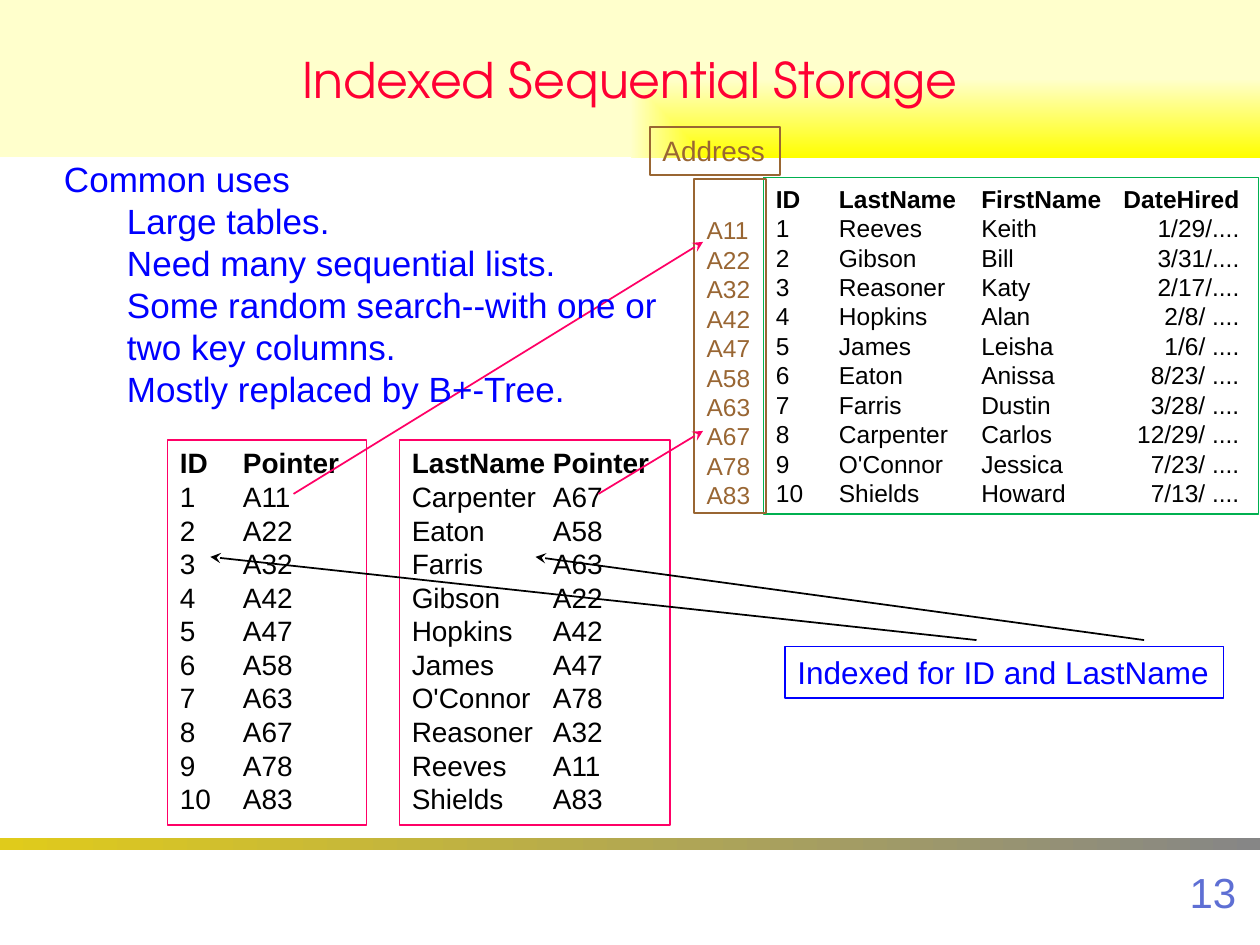
from dataclasses import dataclass

from lxml.etree import SubElement
from pptx import Presentation
from pptx.dml.color import RGBColor as RGB
from pptx.enum.shapes import MSO_CONNECTOR as CONN, MSO_SHAPE as SHAPE
from pptx.enum.text import MSO_ANCHOR as ANCHOR, MSO_AUTO_SIZE as AUTO, PP_ALIGN as ALIGN
from pptx.oxml.ns import qn
from pptx.util import Inches, Pt


@dataclass(frozen=True)
class Theme:
    font: str = "Arial"
    title_font: str = "TeX Gyre Adventor"
    title: str = "FF0033"
    blue: str = "0000FF"
    black: str = "000000"
    pink: str = "FF0066"
    brown: str = "996633"
    green: str = "00B050"
    number: str = "5E6FD4"
    yellow: str = "FFFF00"
    cream: str = "FFFFCC"
    gold: str = "E0CB1B"
    gray: str = "868686"
    title_pt: int = 28
    number_pt: int = 24
    body_pt: int = 20
    label_pt: int = 18
    index_pt: int = 16
    data_pt: int = 14


@dataclass(frozen=True)
class Box:
    at: tuple[float, float, float, float]
    lines: list[str]
    size: int
    color: str
    border: str
    tabs: tuple[tuple[float, str], ...] = ()
    header: bool = False
    wrap: bool = True
    top: float = 0.05


@dataclass(frozen=True)
class Arrow:
    start: tuple[float, float]
    end: tuple[float, float]
    color: str


T = Theme()

HEADER = ("ID", "LastName", "FirstName", "DateHired")
EMPLOYEES = [
    ("A11", "1", "Reeves", "Keith", "1/29/...."),
    ("A22", "2", "Gibson", "Bill", "3/31/...."),
    ("A32", "3", "Reasoner", "Katy", "2/17/...."),
    ("A42", "4", "Hopkins", "Alan", "2/8/ ...."),
    ("A47", "5", "James", "Leisha", "1/6/ ...."),
    ("A58", "6", "Eaton", "Anissa", "8/23/ ...."),
    ("A63", "7", "Farris", "Dustin", "3/28/ ...."),
    ("A67", "8", "Carpenter", "Carlos", "12/29/ ...."),
    ("A78", "9", "O'Connor", "Jessica", "7/23/ ...."),
    ("A83", "10", "Shields", "Howard", "7/13/ ...."),
]
USES = [
    "Large tables.",
    "Need many sequential lists.",
    "Some random search--with one or two key columns.",
    "Mostly replaced by B+-Tree.",
]

addresses = [e[0] for e in EMPLOYEES]
data_rows = ["\t".join(r) for r in [HEADER, *(e[1:] for e in EMPLOYEES)]]
id_index = ["ID\tPointer"] + [f"{e[1]}\t{e[0]}" for e in EMPLOYEES]
name_index = ["LastName\tPointer"] + sorted(f"{e[2]}\t{e[0]}" for e in EMPLOYEES)

BOXES = [
    Box((6.06, 1.41, 3.93, 2.67), data_rows, T.data_pt, T.black, T.green,
        ((0.5, "l"), (1.63, "l"), (3.68, "r")), header=True),
    Box((1.33, 3.49, 1.58, 3.06), id_index, T.index_pt, T.black, T.pink,
        ((0.5, "l"),), header=True),
    Box((5.51, 1.42, 0.57, 2.65), addresses, T.data_pt, T.brown, T.brown,
        wrap=False, top=0.29),
    Box((5.16, 1.01, 1.03, 0.38), ["Address"], T.index_pt, T.brown, T.brown, wrap=False),
    Box((3.17, 3.49, 2.15, 3.06), name_index, T.index_pt, T.black, T.pink,
        ((1.12, "l"),), header=True),
    Box((6.23, 5.13, 3.48, 0.41), ["Indexed for ID and LastName"],
        T.label_pt, T.blue, T.blue, wrap=False),
]
ARROWS = [
    Arrow((2.33, 3.92), (5.58, 1.92), T.pink),
    Arrow((4.75, 3.92), (5.58, 3.42), T.pink),
    Arrow((7.75, 5.08), (1.67, 4.42), T.black),
    Arrow((9.08, 5.08), (4.25, 4.42), T.black),
]


def add_run(p, text: str, size: int, color: str, font: str = T.font, bold: bool = False) -> None:
    r = p.add_run()
    r.text = text
    r.font.name = font
    r.font.size = Pt(size)
    r.font.bold = bold
    r.font.color.rgb = RGB.from_string(color)


def next_paragraph(tf, i: int):
    return tf.add_paragraph() if i else tf.paragraphs[0]


def fill_gradient(sp, first: str, last: str) -> None:
    sp.fill.gradient()
    sp.fill.gradient_angle = 0
    for stop, color in zip(sp.fill.gradient_stops, (first, last)):
        stop.color.rgb = RGB.from_string(color)


def add_title(s, text: str) -> None:
    sp = s.shapes.title
    sp.left, sp.top, sp.width, sp.height = map(Inches, (0, 0, 10, 1.25))
    fill_gradient(sp, T.yellow, T.cream)
    grad = sp._element.spPr.find(qn("a:gradFill"))
    grad.remove(grad.find(qn("a:lin")))
    shade = SubElement(grad, qn("a:path"), {"path": "rect"})
    SubElement(shade, qn("a:fillToRect"), {"l": "100000", "t": "100000"})
    tf = sp.text_frame
    tf.auto_size = AUTO.NONE
    tf.vertical_anchor = ANCHOR.MIDDLE
    p = tf.paragraphs[0]
    p.alignment = ALIGN.CENTER
    add_run(p, text, T.title_pt, T.title, T.title_font)


def add_rule(s) -> None:
    sp = s.shapes.add_shape(SHAPE.RECTANGLE, *map(Inches, (0, 6.65, 10, 0.1)))
    sp.shadow.inherit = False
    sp.line.fill.background()
    fill_gradient(sp, T.gold, T.gray)


def add_number(s, text: str) -> None:
    tf = s.shapes.add_textbox(*map(Inches, (7.83, 6.83, 2.08, 0.5))).text_frame
    tf.word_wrap = True
    tf.vertical_anchor = ANCHOR.MIDDLE
    p = tf.paragraphs[0]
    p.alignment = ALIGN.RIGHT
    add_run(p, text, T.number_pt, T.number)


def add_box(s, box: Box) -> None:
    sp = s.shapes.add_shape(SHAPE.RECTANGLE, *map(Inches, box.at))
    sp.shadow.inherit = False
    sp.fill.background()
    sp.line.color.rgb = RGB.from_string(box.border)
    sp.line.width = Pt(1)
    tf = sp.text_frame
    tf.word_wrap = box.wrap
    tf.vertical_anchor = ANCHOR.TOP
    tf.margin_top = Inches(box.top)
    for i, line in enumerate(box.lines):
        p = next_paragraph(tf, i)
        p.alignment = ALIGN.LEFT
        if box.tabs:
            tabs = SubElement(p._p.get_or_add_pPr(), qn("a:tabLst"))
            for pos, algn in box.tabs:
                SubElement(tabs, qn("a:tab"), {"pos": str(Inches(pos)), "algn": algn})
        add_run(p, line, box.size, box.color, bold=box.header and i == 0)


def add_arrow(s, arrow: Arrow) -> None:
    c = s.shapes.add_connector(CONN.STRAIGHT, *map(Inches, arrow.start + arrow.end))
    c.line.color.rgb = RGB.from_string(arrow.color)
    c.line.width = Pt(1)
    SubElement(c.line._get_or_add_ln(), qn("a:tailEnd"), {"type": "stealth"})
    SubElement(c._element.spPr, qn("a:effectLst"))


def add_uses(s, heading: str, uses: list[str]) -> None:
    tf = s.shapes.add_textbox(*map(Inches, (0.41, 1.2, 5, 2.19))).text_frame
    tf.word_wrap = True
    for i, line in enumerate([heading, *uses]):
        p = next_paragraph(tf, i)
        if i:
            p.level = 1
            pPr = p._p.get_or_add_pPr()
            pPr.set("marL", str(Inches(0.5)))
            pPr.set("indent", "0")
        add_run(p, line, T.body_pt, T.blue)


def main() -> None:
    prs = Presentation()
    prs.slide_width, prs.slide_height = Inches(10), Inches(7.5)
    s = prs.slides.add_slide(prs.slide_layouts[5])
    add_title(s, "Indexed Sequential Storage")
    add_rule(s)
    add_number(s, "13")
    for box in BOXES:
        add_box(s, box)
    for arrow in ARROWS:
        add_arrow(s, arrow)
    add_uses(s, "Common uses", USES)
    prs.save("out.pptx")


if __name__ == "__main__":
    main()
